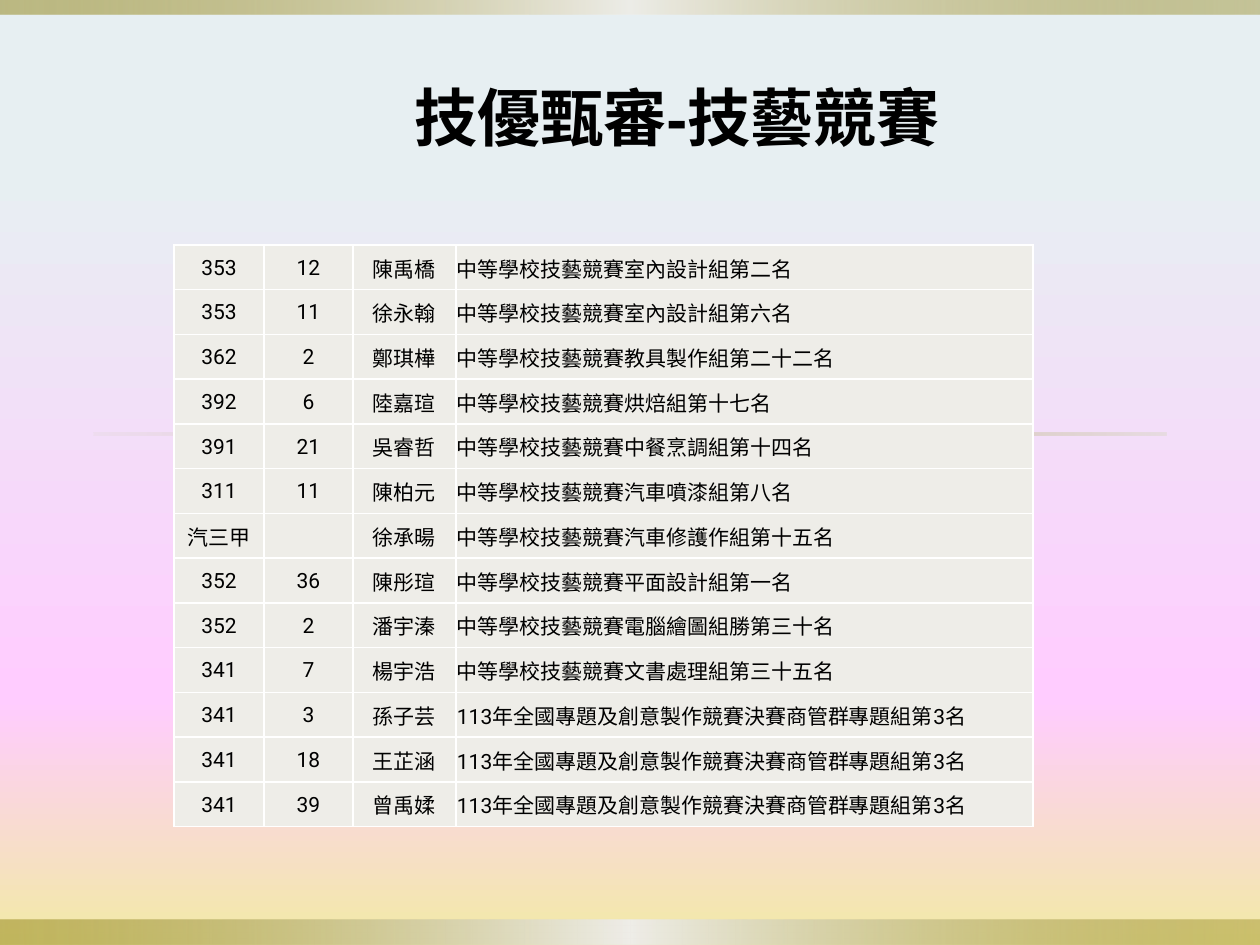
"""Build a slide that lists the winners of a skills contest in a table."""
from lxml.etree import SubElement as Sub
from pptx import Presentation
from pptx.dml.color import RGBColor as RGB
from pptx.enum.shapes import MSO_SHAPE as Shape
from pptx.enum.text import MSO_ANCHOR as Anchor, PP_ALIGN as Align
from pptx.oxml.ns import qn
from pptx.util import Pt

PX = 914400 // 126
BLACK = RGB(0x00, 0x00, 0x00)
WHITE = RGB(0xFF, 0xFF, 0xFF)
GREY = RGB(0xEE, 0xED, 0xE8)
SAND = RGB(0xDC, 0xD9, 0xCC)
OLIVE = RGB(0x91, 0x84, 0x15)
ICE = RGB(0xE7, 0xEF, 0xF2)
PINK = RGB(0xFF, 0xCC, 0xFF)
CREAM = RGB(0xF2, 0xEA, 0xA5)


def blend(fill, root, stops, angle):
    fill.gradient()
    grad = root.find(".//" + qn("a:gradFill"))
    for child in list(grad):
        grad.remove(child)
    group = Sub(grad, qn("a:gsLst"))
    for pos, color, alpha in stops:
        stop = Sub(group, qn("a:gs"), pos=str(pos * 1000))
        tint = Sub(stop, qn("a:srgbClr"), val=str(color))
        if alpha < 100:
            Sub(tint, qn("a:alpha"), val=str(alpha * 1000))
    Sub(grad, qn("a:lin"), ang=str(angle * 60000), scaled="0")


def write(para, text, face, size, bold=False):
    run = para.add_run()
    run.text = text
    run.font.name = face
    run.font.size = Pt(size)
    run.font.bold = bold
    run.font.color.rgb = BLACK


deck = Presentation()
deck.slide_width = 1260 * PX
deck.slide_height = 945 * PX
slide = deck.slides.add_slide(deck.slide_layouts[6])
sky = [(18, ICE, 100), (74, PINK, 100), (100, CREAM, 100)]
blend(slide.background.fill, slide.element, sky, 90)

gold = [(0, OLIVE, 50), (50, GREY, 100), (100, OLIVE, 40)]
rule = [(0, SAND, 20), (50, OLIVE, 40), (100, SAND, 50)]
bands = [
    (0, 920, 1260, 25, gold),
    (0, 0, 1260, 15, gold),
    (94, 433, 1072, 3, rule),
]
for left, top, width, height, stops in bands:
    band = slide.shapes.add_shape(
        Shape.RECTANGLE, left * PX, top * PX, width * PX, height * PX)
    band.shadow.inherit = False
    band.line.fill.background()
    blend(band.fill, band.element, stops, 0)

title = slide.shapes.add_textbox(402 * PX, 72 * PX, 562 * PX, 89 * PX)
title.text_frame.word_wrap = True
write(title.text_frame.paragraphs[0], "技優甄審-技藝競賽", "Arial", 36, True)

SKILL = "中等學校技藝競賽"
TOPIC = "113年全國專題及創意製作競賽決賽商管群專題組第3名"
rows = [
    ("353", "12", "陳禹橋", SKILL + "室內設計組第二名"),
    ("353", "11", "徐永翰", SKILL + "室內設計組第六名"),
    ("362", "2", "鄭琪樺", SKILL + "教具製作組第二十二名"),
    ("392", "6", "陸嘉瑄", SKILL + "烘焙組第十七名"),
    ("391", "21", "吳睿哲", SKILL + "中餐烹調組第十四名"),
    ("311", "11", "陳柏元", SKILL + "汽車噴漆組第八名"),
    ("汽三甲", "", "徐承暘", SKILL + "汽車修護作組第十五名"),
    ("352", "36", "陳彤瑄", SKILL + "平面設計組第一名"),
    ("352", "2", "潘宇溱", SKILL + "電腦繪圖組勝第三十名"),
    ("341", "7", "楊宇浩", SKILL + "文書處理組第三十五名"),
    ("341", "3", "孫子芸", TOPIC),
    ("341", "18", "王芷涵", TOPIC),
    ("341", "39", "曾禹媃", TOPIC),
]
widths = [90, 89, 103, 577]
frame = slide.shapes.add_table(
    len(rows), len(widths), 174 * PX, 245 * PX, sum(widths) * PX, 582 * PX)
table = frame.table
for column, width in zip(table.columns, widths):
    column.width = width * PX
for r, row in enumerate(rows):
    for c, text in enumerate(row):
        cell = table.cell(r, c)
        cell.margin_left = cell.margin_right = cell.margin_top = PX
        cell.margin_bottom = 0
        cell.vertical_anchor = Anchor.MIDDLE
        props = cell._tc.get_or_add_tcPr()
        for side in ("L", "R", "T", "B"):
            edge = Sub(props, qn("a:ln" + side), w=str(Pt(1)))
            Sub(Sub(edge, qn("a:solidFill")), qn("a:srgbClr"), val=str(WHITE))
        cell.fill.solid()
        cell.fill.fore_color.rgb = GREY
        para = cell.text_frame.paragraphs[0]
        para.alignment = Align.CENTER if c < 3 else Align.LEFT
        if text:
            write(para, text, "Roboto", 12)

deck.save("out.pptx")
